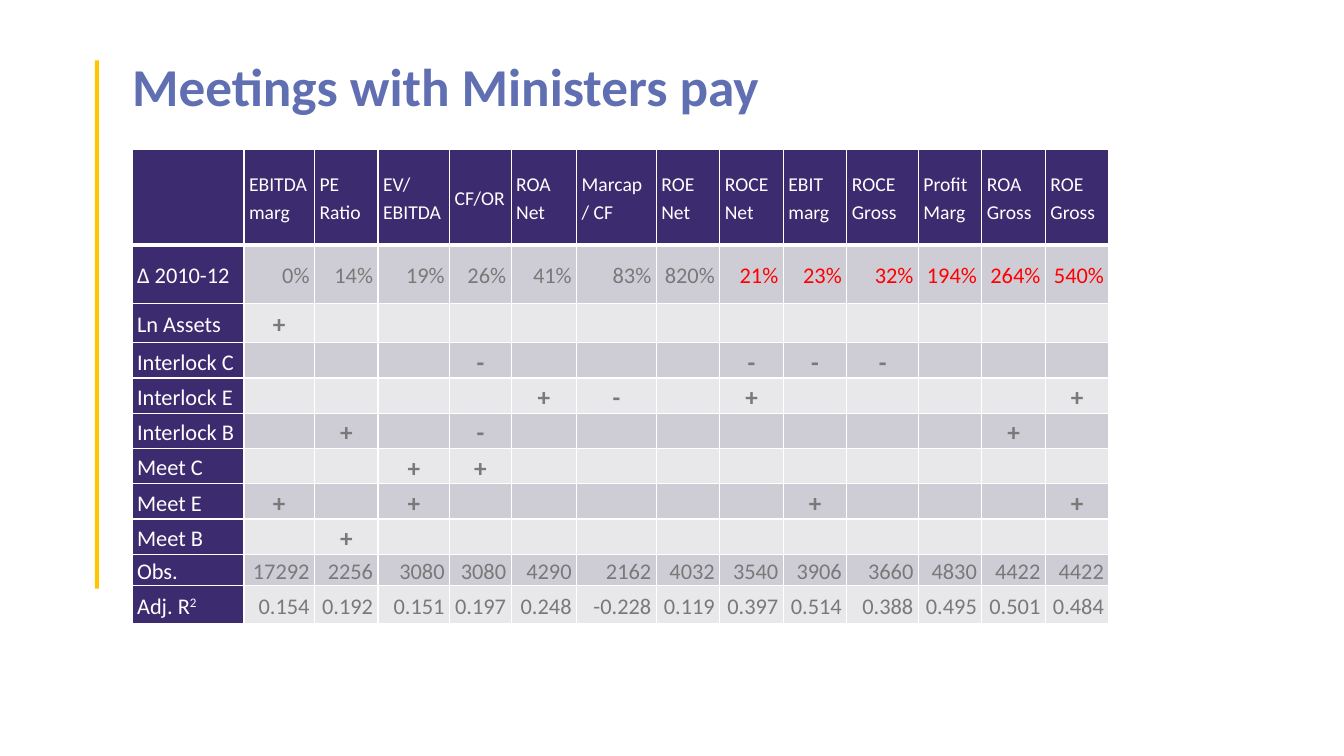
from dataclasses import dataclass

import pptx
import pptx.dml.color
import pptx.enum.shapes
import pptx.enum.text
import pptx.oxml
import pptx.oxml.ns
import pptx.util

ALIGN = pptx.enum.text.PP_ALIGN
GRID_COLUMNS, GRID_ROWS = 1333, 750
SLIDE_WIDTH, SLIDE_HEIGHT = pptx.util.Inches(13.33), pptx.util.Inches(7.5)


@dataclass(frozen=True)
class Theme:
    font: str = "Calibri"
    accent: str = "FFC600"
    title: str = "606EB2"
    heading_fill: str = "3C2B6E"
    bands: tuple = ("E8E8EB", "CECDD5")
    white: str = "FFFFFF"
    body: str = "797979"
    alert: str = "FF0000"
    title_size: int = 38
    sign_size: int = 18
    body_size: int = 16
    heading_size: int = 14


HEADINGS = ["EBITDA marg", "PE Ratio", "EV/ EBITDA", "CF/OR", "ROA Net",
            "Marcap / CF", "ROE Net", "ROCE Net", "EBIT marg", "ROCE Gross",
            "Profit Marg", "ROA Gross", "ROE Gross"]
FIRST_ALERT_COLUMN = HEADINGS.index("ROCE Net")
CHANGES = "0% 14% 19% 26% 41% 83% 820% 21% 23% 32% 194% 264% 540%".split()
# One character per measure; a dot marks no effect.
SIGNS = {
    "Ln Assets": "+............",
    "Interlock C": "...-...---...",
    "Interlock E": "....+-.+....+",
    "Interlock B": ".+.-.......+.",
    "Meet C": "..++.........",
    "Meet E": "+.+.....+...+",
    "Meet B": ".+...........",
}
OBSERVATIONS = "17292 2256 3080 3080 4290 2162 4032 3540 3906 3660 4830 4422 4422".split()
FIT = ("0.154 0.192 0.151 0.197 0.248 -0.228 0.119 0.397 0.514 0.388 "
       "0.495 0.501 0.484").split()
COLUMN_WIDTHS = [111, 70, 63, 71, 61, 65, 79, 63, 63, 63, 71, 63, 63, 63]
ROW_HEIGHTS = [95, 58, 39] + [35] * 6 + [31, 38]


class SlideBuilder:
    def __init__(self, presentation, theme):
        self.theme = theme
        self.slide = presentation.slides.add_slide(presentation.slide_layouts[6])

    def across(self, columns):
        return round(SLIDE_WIDTH * columns / GRID_COLUMNS)

    def down(self, rows):
        return round(SLIDE_HEIGHT * rows / GRID_ROWS)

    def box(self, left, top, width, height):
        return self.across(left), self.down(top), self.across(width), self.down(height)

    def color(self, value):
        return pptx.dml.color.RGBColor.from_string(value)

    def add_run(self, paragraph, text, size, color, bold=False):
        run = paragraph.add_run()
        run.text = text
        run.font.name = self.theme.font
        run.font.size = pptx.util.Pt(size)
        run.font.bold = bold
        run.font.color.rgb = self.color(color)
        return run

    def add_bar(self, *place):
        shape = self.slide.shapes.add_shape(
            pptx.enum.shapes.MSO_SHAPE.RECTANGLE, *self.box(*place))
        shape.shadow.inherit = False
        shape.fill.solid()
        shape.fill.fore_color.rgb = self.color(self.theme.accent)
        shape.line.fill.background()

    def add_title(self, text, *place):
        frame = self.slide.shapes.add_textbox(*self.box(*place)).text_frame
        frame.word_wrap = True
        frame.margin_left = frame.margin_right = 0
        frame.margin_top = frame.margin_bottom = 0
        paragraph = frame.paragraphs[0]
        paragraph.line_spacing = 0.9
        self.add_run(paragraph, text, self.theme.title_size, self.theme.title, True)

    def add_table(self, left, top, widths, heights):
        place = self.box(left, top, sum(widths), sum(heights))
        table = self.slide.shapes.add_table(len(heights), len(widths), *place).table
        table.first_row = table.horz_banding = False
        for column, width in zip(table.columns, widths):
            column.width = self.across(width)
        for row, height in zip(table.rows, heights):
            row.height = self.down(height)
        for row_index in range(len(heights)):
            for column_index in range(len(widths)):
                heading = row_index == 0 or column_index == 0
                fill = self.theme.heading_fill if heading else self.theme.bands[row_index % 2]
                self.style_cell(table.cell(row_index, column_index), fill,
                                3 if row_index == 0 else 1)
        return table

    def style_cell(self, cell, fill, bottom_width):
        cell.margin_left = cell.margin_right = pptx.util.Inches(0.05)
        cell.margin_top = cell.margin_bottom = 0
        cell.vertical_anchor = pptx.enum.text.MSO_ANCHOR.MIDDLE
        properties = cell._tc.get_or_add_tcPr()
        for side, width in (("L", 1), ("R", 1), ("T", 1), ("B", bottom_width)):
            properties.append(pptx.oxml.parse_xml(
                f'<a:ln{side} {pptx.oxml.ns.nsdecls("a")} w="{pptx.util.Pt(width)}">'
                f'<a:solidFill><a:srgbClr val="{self.theme.white}"/></a:solidFill>'
                f'</a:ln{side}>'))
        cell.fill.solid()
        cell.fill.fore_color.rgb = self.color(fill)

    def write_cell(self, cell, text, size, color, align=ALIGN.LEFT, bold=False):
        paragraph = cell.text_frame.paragraphs[0]
        paragraph.alignment = align
        paragraph.line_spacing = 1.15
        self.add_run(paragraph, text, size, color, bold)
        return paragraph

    def write_row(self, table, row, label, values):
        """Fill a row; values that are plus or minus signs are centred and bold."""
        theme = self.theme
        paragraph = self.write_cell(table.cell(row, 0), label, theme.body_size, theme.white)
        for index, value in enumerate(values):
            cell = table.cell(row, index + 1)
            if value in ("+", "-"):
                self.write_cell(cell, value, theme.sign_size, theme.body, ALIGN.CENTER, True)
            elif value != ".":
                alert = value.endswith("%") and index >= FIRST_ALERT_COLUMN
                self.write_cell(cell, value, theme.body_size,
                                theme.alert if alert else theme.body, ALIGN.RIGHT)
        return paragraph


def main():
    presentation = pptx.Presentation()
    presentation.slide_width, presentation.slide_height = SLIDE_WIDTH, SLIDE_HEIGHT
    theme = Theme()
    builder = SlideBuilder(presentation, theme)
    builder.add_bar(94, 60, 4, 524)
    builder.add_title("Meetings with Ministers pay", 131, 60, 1102, 110)

    table = builder.add_table(131, 148, COLUMN_WIDTHS, ROW_HEIGHTS)
    for column, heading in enumerate(HEADINGS, start=1):
        builder.write_cell(table.cell(0, column), heading, theme.heading_size, theme.white)
    rows = [("Δ 2010-12", CHANGES), *SIGNS.items(), ("Obs.", OBSERVATIONS), ("Adj. R", FIT)]
    for row, (label, values) in enumerate(rows, start=1):
        paragraph = builder.write_row(table, row, label, values)
    square = builder.add_run(paragraph, "2", theme.body_size, theme.white)
    square._r.get_or_add_rPr().set("baseline", "30000")

    presentation.save("out.pptx")


if __name__ == "__main__":
    main()
